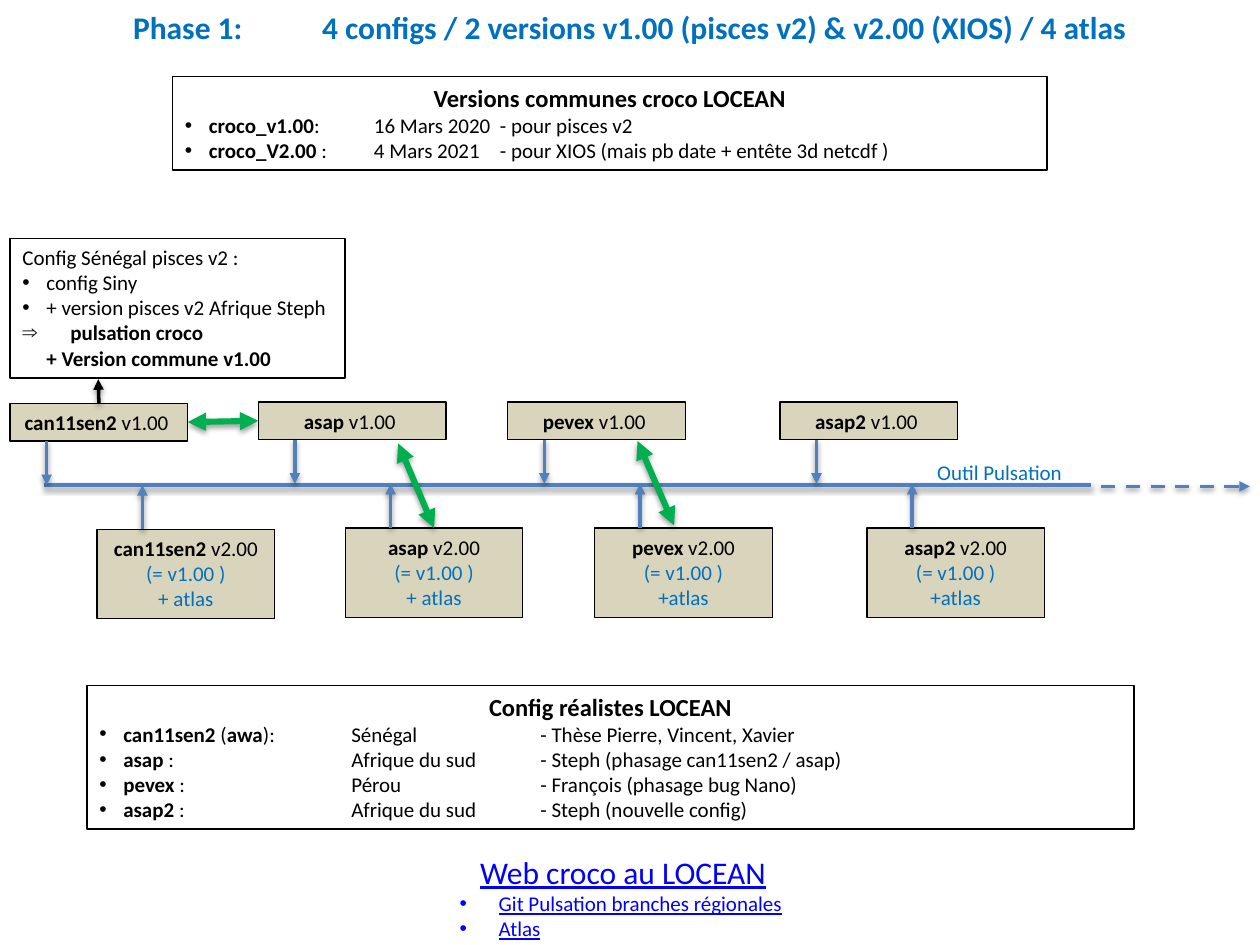
import pptx
import pptx.util
import pptx.dml.color
import pptx.enum.dml
import pptx.enum.shapes
import pptx.enum.text
import pptx.oxml
import pptx.oxml.ns
from dataclasses import dataclass
from typing import NamedTuple, Optional

RGB = pptx.dml.color.RGBColor
BLACK = RGB(0x00, 0x00, 0x00)
WHITE = RGB(0xFF, 0xFF, 0xFF)
SAND = RGB(0xC4, 0xBD, 0x97)
STEEL = RGB(0x4F, 0x81, 0xBD)
BLUE = RGB(0x00, 0x70, 0xC0)
GREEN = RGB(0x00, 0xB0, 0x50)
LINK = RGB(0x00, 0x00, 0xFF)

ALIGN = pptx.enum.text.PP_ALIGN
ANCHOR = pptx.enum.text.MSO_ANCHOR
FIT = pptx.enum.text.MSO_AUTO_SIZE
TOP, LEFT, RIGHT = 0, 1, 3
WIDE, HIGH = pptx.util.Inches(10), pptx.util.Inches(7.5)
COLS, ROWS = 100, 75  # slide grid


class Box(NamedTuple):
    """A frame in grid columns and rows."""
    x: float
    y: float
    w: float
    h: float


@dataclass
class Para:
    """A paragraph; parts between asterisks are bold."""
    text: str
    size: float = 12
    color: RGB = BLACK
    align: ALIGN = ALIGN.LEFT
    mark: str = ""
    indent: float = 0
    under: bool = False


@dataclass
class Config:
    name: str
    x: float
    atlas: str
    width: float = 14.1
    drop: float = 0


def col(n: float) -> int:
    return round(WIDE * n / COLS)


def row(n: float) -> int:
    return round(HIGH * n / ROWS)


def apply(target, values: dict) -> None:
    for key, value in values.items():
        setattr(target, key, value)


def add_xml(parent, tag: str, inner: str = "", attrs: str = "") -> None:
    space = pptx.oxml.ns.nsdecls("a")
    parent.append(pptx.oxml.parse_xml(f"<a:{tag} {space} {attrs}>{inner}</a:{tag}>"))


def write(shape, paras: list[Para], **frame) -> None:
    body = shape.text_frame
    apply(body, {"word_wrap": True, "vertical_anchor": ANCHOR.TOP,
                 "auto_size": FIT.SHAPE_TO_FIT_TEXT} | frame)
    for i, para in enumerate(paras):
        line = body.paragraphs[0] if i == 0 else body.add_paragraph()
        line.alignment = para.align
        props = line._p.get_or_add_pPr()
        if para.indent:
            props.set("marL", str(col(para.indent)))
        if para.mark:
            props.set("indent", str(-col(para.indent)))
            add_xml(props, "buFont", attrs='typeface="Arial"')
            add_xml(props, "buChar", attrs=f'char="{para.mark}"')
        for k, part in enumerate(para.text.split("*")):
            if part:
                run = line.add_run()
                run.text = part
                apply(run.font, {"name": "Calibri", "size": pptx.util.Pt(para.size),
                                 "bold": k % 2 == 1, "underline": para.under})
                run.font.color.rgb = para.color


def draw_box(slide, box: Box, fill: RGB, paras: list[Para]):
    shape = slide.shapes.add_shape(pptx.enum.shapes.MSO_SHAPE.RECTANGLE,
                                   col(box.x), row(box.y), col(box.w), row(box.h))
    shape.shadow.inherit = False
    shape.fill.solid()
    shape.fill.fore_color.rgb = fill
    tint = shape.fill._xPr.find(pptx.oxml.ns.qn("a:solidFill"))[0]
    add_xml(tint, "alpha", attrs='val="64000"')
    shape.line.color.rgb = BLACK
    shape.line.width = pptx.util.Pt(0.75)
    write(shape, paras)
    return shape


def draw_text(slide, box: Box, paras: list[Para], **frame) -> None:
    shape = slide.shapes.add_textbox(col(box.x), row(box.y), col(box.w), row(box.h))
    write(shape, paras, **frame)


def draw_line(slide, x1: float, y1: float, x2: float, y2: float, color: RGB = STEEL,
              width: float = 2, ends: tuple = ("tailEnd",), dash: bool = False,
              start: Optional[tuple] = None, stop: Optional[tuple] = None) -> None:
    link = slide.shapes.add_connector(pptx.enum.shapes.MSO_CONNECTOR.STRAIGHT,
                                      col(x1), row(y1), col(x2), row(y2))
    if start:
        link.begin_connect(*start)
    if stop:
        link.end_connect(*stop)
    link.line.color.rgb = color
    link.line.width = pptx.util.Pt(width)
    if dash:
        link.line.dash_style = pptx.enum.dml.MSO_LINE.DASH
    for end in ends:
        add_xml(link.line._get_or_add_ln(), end, attrs='type="triangle"')
    add_xml(link._element.spPr, "effectLst",
            '<a:outerShdw blurRad="40000" dist="20000" dir="5400000" rotWithShape="0">'
            '<a:srgbClr val="000000"><a:alpha val="38000"/></a:srgbClr></a:outerShdw>')


def head(text: str) -> Para:
    return Para(f"*{text}*", 14, align=ALIGN.CENTER)


def item(text: str) -> Para:
    return Para(text, mark="•", indent=1.9)


def site(text: str) -> Para:
    return Para(text, color=LINK, mark="•", indent=3.1, under=True)


def main() -> None:
    deck = pptx.Presentation()
    deck.slide_width, deck.slide_height = WIDE, HIGH
    slide = deck.slides.add_slide(deck.slide_layouts[6])

    # Title
    draw_text(slide, Box(0, 0, 100, 4.3), [
        Para("*Phase 1:\t\t4 configs / 2 versions v1.00 (pisces v2) & v2.00 (XIOS) / 4 atlas*",
             18, BLUE, ALIGN.CENTER)], vertical_anchor=ANCHOR.MIDDLE, auto_size=FIT.NONE)

    # Summary boxes
    draw_box(slide, Box(13.7, 6.1, 69.4, 7.4), WHITE, [
        head("Versions communes croco LOCEAN"),
        item("*croco_v1.00*:\t16 Mars 2020\t- pour pisces v2"),
        item("*croco_V2.00 *:\t4 Mars 2021\t- pour XIOS (mais pb date + entête 3d netcdf )")])
    draw_box(slide, Box(6.9, 54.4, 83.1, 11.4), WHITE, [
        head("Config réalistes LOCEAN"),
        item("*can11sen2* (*awa*):\t\tSénégal\t\t- Thèse Pierre, Vincent, Xavier"),
        item("*asap* :\t\t\tAfrique du sud\t\t- Steph (phasage can11sen2 / asap)"),
        item("*pevex* :\t\t\tPérou\t\t\t- François (phasage bug Nano)"),
        item("*asap2* :\t\t\tAfrique du sud\t\t- Steph (nouvelle config)")])

    # Time line
    axis = 38.5
    draw_line(slide, 3.5, axis, 86.6, axis, ends=())
    draw_line(slide, 87.4, axis + 0.1, 99.2, axis + 0.1, dash=True)
    draw_text(slide, Box(73.4, 36, 12, 3), [Para("Outil Pulsation", color=BLUE)],
              word_wrap=False)

    # Configs: v1.00 above the time line, v2.00 below
    old, new = {}, {}
    for conf in (Config("can11sen2", 0.8, "+ atlas", drop=0.1),
                 Config("asap", 20.5, "+ atlas", width=14.9),
                 Config("pevex", 40.3, "+atlas"),
                 Config("asap2", 61.9, "+atlas")):
        name, x, y = conf.name, conf.x, 31.9 + conf.drop
        old[name] = draw_box(slide, Box(x, y, conf.width, 3), SAND, [
            Para(f"*{name}* v1.00 ", align=ALIGN.CENTER)])
        new[name] = draw_box(slide, Box(x + 6.9, y + 10, 14.1, 7.1), SAND, [
            Para(f"*{name}* v2.00", align=ALIGN.CENTER),
            Para("(= v1.00 )", color=BLUE, align=ALIGN.CENTER),
            Para(conf.atlas, color=BLUE, align=ALIGN.CENTER)])
        draw_line(slide, x + 2.9, y + 3, x + 2.9, y + 6.5)
        draw_line(slide, x + 10.5, y + 10, x + 10.5, y + 6.5)

    # Links at the foot
    draw_text(slide, Box(35.5, 67.2, 27.9, 8.1), [
        Para("Web croco au LOCEAN", 18, LINK, ALIGN.CENTER, under=True),
        site("Git Pulsation branches régionales"), site("Atlas")], word_wrap=False)

    # Detail of the first config
    draw_box(slide, Box(0.8, 18.9, 26.6, 11.1), WHITE, [
        Para("Config Sénégal pisces v2 :"), item("config Siny"),
        item("+ version pisces v2 Afrique Steph"),
        Para("*pulsation croco*", mark="⇒", indent=3.8),
        Para("*+ Version commune v1.00*", indent=1.9)])
    draw_line(slide, 7.8, 32, 7.8, 30.1, BLACK, start=(old["can11sen2"], TOP))

    # Exchanges between configs
    both = {"color": GREEN, "width": 3.5, "ends": ("headEnd", "tailEnd")}
    draw_line(slide, 14.9, 33.5, 20.5, 33.4, **both,
              start=(old["can11sen2"], RIGHT), stop=(old["asap"], LEFT))
    draw_line(slide, 31.6, 35.2, 34.5, 41.9, **both, stop=(new["asap"], TOP))
    draw_line(slide, 50.6, 35, 53.5, 41.7, **both)

    deck.save("out.pptx")


if __name__ == "__main__":
    main()
